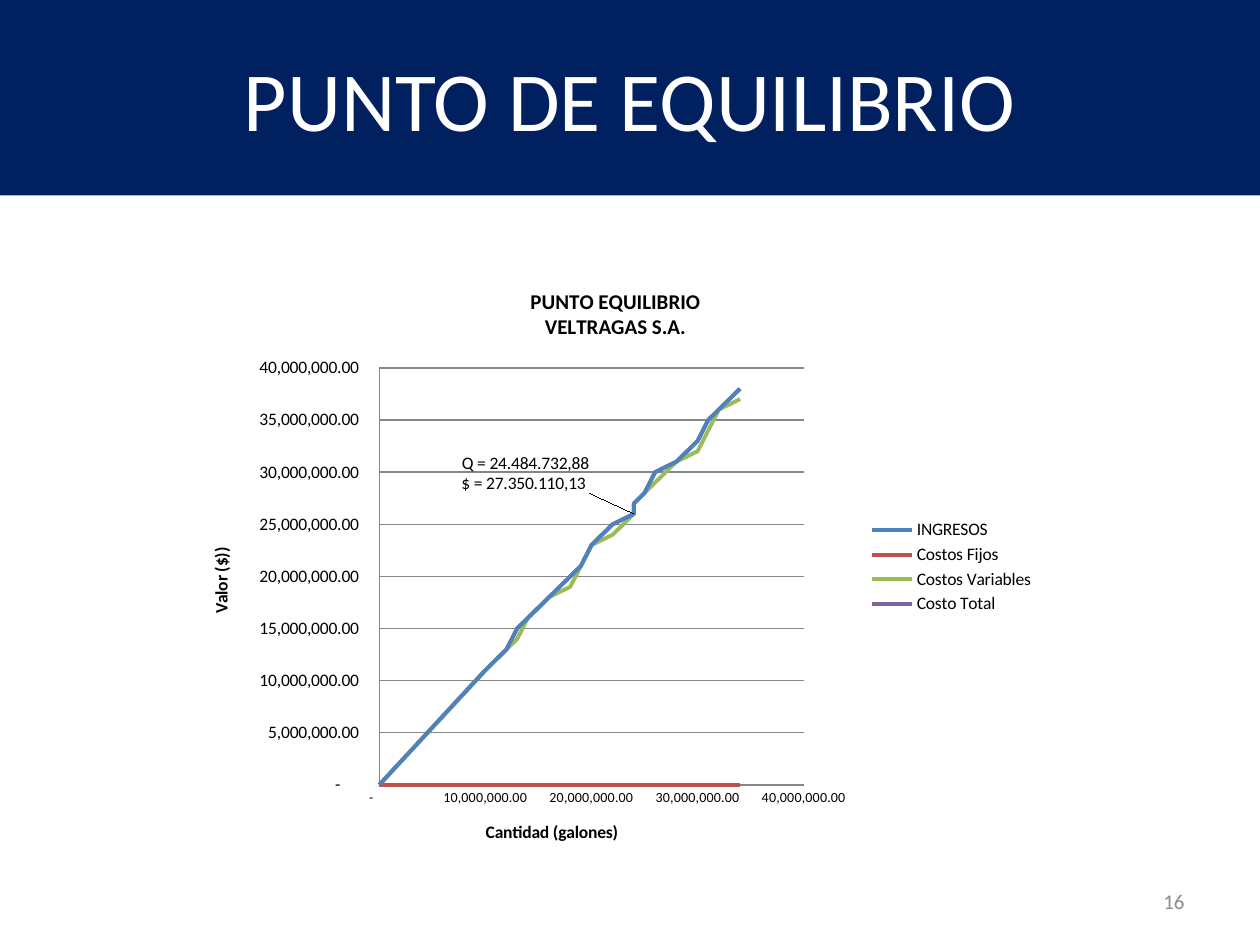
from lxml import etree
from pptx import Presentation
from pptx.chart.data import XyChartData
from pptx.dml.color import RGBColor
from pptx.enum.chart import XL_CHART_TYPE, XL_LEGEND_POSITION, XL_TICK_MARK
from pptx.enum.shapes import MSO_SHAPE
from pptx.enum.text import MSO_ANCHOR, PP_ALIGN
from pptx.oxml import parse_xml
from pptx.oxml.ns import qn
from pptx.util import Inches, Pt

SMOOTH = XL_CHART_TYPE.XY_SCATTER_SMOOTH_NO_MARKERS
RIGHT_KEY = XL_LEGEND_POSITION.RIGHT
NO_TICK = XL_TICK_MARK.NONE
RECT = MSO_SHAPE.RECTANGLE
MIDDLE = MSO_ANCHOR.MIDDLE
LEFT, CENTER, RIGHT = PP_ALIGN.LEFT, PP_ALIGN.CENTER, PP_ALIGN.RIGHT

NAVY = RGBColor(0x00, 0x20, 0x60)
WHITE = RGBColor(0xFF, 0xFF, 0xFF)
BLACK = RGBColor(0x00, 0x00, 0x00)
GRAY = RGBColor(0x8C, 0x8C, 0x8C)
RULE = RGBColor(0x86, 0x86, 0x86)
BLUE = RGBColor(0x4F, 0x81, 0xBD)
RED = RGBColor(0xC0, 0x50, 0x4D)
GREEN = RGBColor(0x9B, 0xBB, 0x59)
PURPLE = RGBColor(0x80, 0x64, 0xA2)

MONEY = '_(* #,##0.00_);_(* (#,##0.00);_(* "-"??_);_(@_)'
PADDED = '_(* #,##0.00_)_)_)_);_(* (#,##0.00)_)_)_);_(* "-"??_)_)_)_);_(@_)'
MILLION = 1_000_000
GALLONS = [0, 10, 12, 13, 14, 16, 18, 19, 20, 22, 24, 24, 25, 26, 28, 30, 31, 32, 34]
INCOME = [0, 11, 13, 15, 16, 18, 20, 21, 23, 25, 26, 27, 28, 30, 31, 33, 35, 36, 38]
COSTS = [0, 11, 13, 14, 16, 18, 19, 21, 23, 24, 26, 27, 28, 29, 31, 32, 34, 36, 37]
LINES = [
    ("INGRESOS", BLUE, INCOME),
    ("Costos Fijos", RED, [0] * len(GALLONS)),
    ("Costos Variables", GREEN, COSTS),
    ("Costo Total", PURPLE, INCOME),
]
WIDE, HIGH = 6.85, 4.8
LEADER = (
    '<c:extLst xmlns:c="http://schemas.openxmlformats.org/drawingml/2006/chart">'
    '<c:ext uri="{CE6537A1-D6FC-4f65-9D91-7224C49458BB}" '
    'xmlns:c15="http://schemas.microsoft.com/office/drawing/2012/chart">'
    '<c15:showLeaderLines val="1"/></c:ext></c:extLst>'
)


def write(frame, text, font="Calibri", size=10, color=BLACK, bold=False, align=CENTER):
    """Fill a text frame, one paragraph for each line of text."""
    for i, line in enumerate(text.split("\n")):
        para = frame.paragraphs[0] if i == 0 else frame.add_paragraph()
        para.alignment = align
        run = para.add_run()
        run.text = line
        run.font.name = font
        run.font.size = Pt(size)
        run.font.bold = bold
        run.font.color.rgb = color


def place(node, index, x, y, w=None, h=None, **modes):
    """Give a chart part a manual layout, from lengths in inches."""
    box = node.find(qn("c:layout"))
    if box is None:
        box = etree.Element(qn("c:layout"))
        node.insert(index, box)
    parts = dict(modes, x=x / WIDE, y=y / HIGH)
    if w and h:
        parts.update(w=w / WIDE, h=h / HIGH)
    form = etree.SubElement(box, qn("c:manualLayout"))
    for name, value in parts.items():
        etree.SubElement(form, qn("c:" + name)).set("val", str(value))


class Deck:
    """Holds the style and the current slide."""

    def __init__(self):
        self.show = Presentation()
        self.show.slide_width = Inches(10)
        self.show.slide_height = Inches(7.5)
        self.slide = self.show.slides.add_slide(self.show.slide_layouts[6])

    def band(self, text, *box):
        shape = self.slide.shapes.add_shape(RECT, *map(Inches, box))
        shape.shadow.inherit = False
        shape.fill.solid()
        shape.fill.fore_color.rgb = NAVY
        shape.line.fill.background()
        shape.text_frame.vertical_anchor = MIDDLE
        write(shape.text_frame, text, size=48, color=WHITE)

    def note(self, text, *box, **style):
        frame = self.slide.shapes.add_textbox(*map(Inches, box)).text_frame
        frame.word_wrap = True
        frame.vertical_anchor = MIDDLE
        write(frame, text, **style)

    def axis(self, axis, title, step, size, form, left, top):
        axis.minimum_scale = 0
        axis.maximum_scale = 40 * MILLION
        axis.major_unit = step * MILLION
        axis.major_tick_mark = axis.minor_tick_mark = NO_TICK
        axis.format.line.color.rgb = RULE
        axis.format.line.width = Pt(0.75)
        labels = axis.tick_labels
        labels.number_format = form
        labels.number_format_is_linked = False
        labels.font.size = Pt(size)
        write(axis.axis_title.text_frame, title, bold=True)
        place(axis.axis_title._element, 1, left, top, xMode="edge", yMode="edge")

    def label(self, series, index, text, right, down):
        tag = series.points[index].data_label
        write(tag.text_frame, text, align=LEFT)
        place(tag._dLbl, 1, right, down)
        group = series._element.get_or_add_dLbls()
        group.find(qn("c:showVal")).set("val", "0")
        group.append(parse_xml(LEADER))

    def chart(self, title, left, top):
        data = XyChartData(number_format=MONEY)
        for name, _, values in LINES:
            line = data.add_series(name)
            for x, y in zip(GALLONS, values):
                line.add_data_point(x * MILLION, y * MILLION)
        box = map(Inches, (left, top, WIDE, HIGH))
        chart = self.slide.shapes.add_chart(SMOOTH, *box, data).chart
        chart.font.name = "Calibri"
        chart.font.size = Pt(10)
        chart.font.color.rgb = BLACK
        write(chart.chart_title.text_frame, title, size=12, bold=True)
        chart.has_legend = True
        chart.legend.position = RIGHT_KEY
        chart.legend.include_in_layout = False
        plot = chart.plots[0]
        plot.vary_by_categories = False
        for line, (_, color, _) in zip(plot.series, LINES):
            line.smooth = True
            line.format.line.color.rgb = color
            line.format.line.width = Pt(2.25)
        self.axis(chart.category_axis, "Cantidad (galones)", 10, 8, MONEY, 2.37, 4.39)
        self.axis(chart.value_axis, "Valor ($))", 5, 10, PADDED, 0.18, 2.22)
        chart.category_axis.has_major_gridlines = False
        chart.value_axis.has_major_gridlines = True
        grid = chart.value_axis.major_gridlines.format.line
        grid.color.rgb = RULE
        grid.width = Pt(0.75)
        place(chart._chartSpace.chart.plotArea, 0, 1.55, 0.82, 3.37, 3.31,
              layoutTarget="inner", xMode="edge", yMode="edge")
        self.label(plot.series[3], 10, "Q = 24.484.732,88\n$ = 27.350.110,13 ", -1.41, -0.32)


def main():
    """Build the slide and save it."""
    deck = Deck()
    deck.band("PUNTO DE EQUILIBRIO", 0, 0, 10, 1.55)
    deck.note("16", 7.17, 6.95, 2.33, 0.4, size=12, color=GRAY, align=RIGHT)
    deck.chart("PUNTO EQUILIBRIO\nVELTRAGAS S.A.", 1.46, 2.1)
    deck.show.save("out.pptx")


if __name__ == "__main__":
    main()
